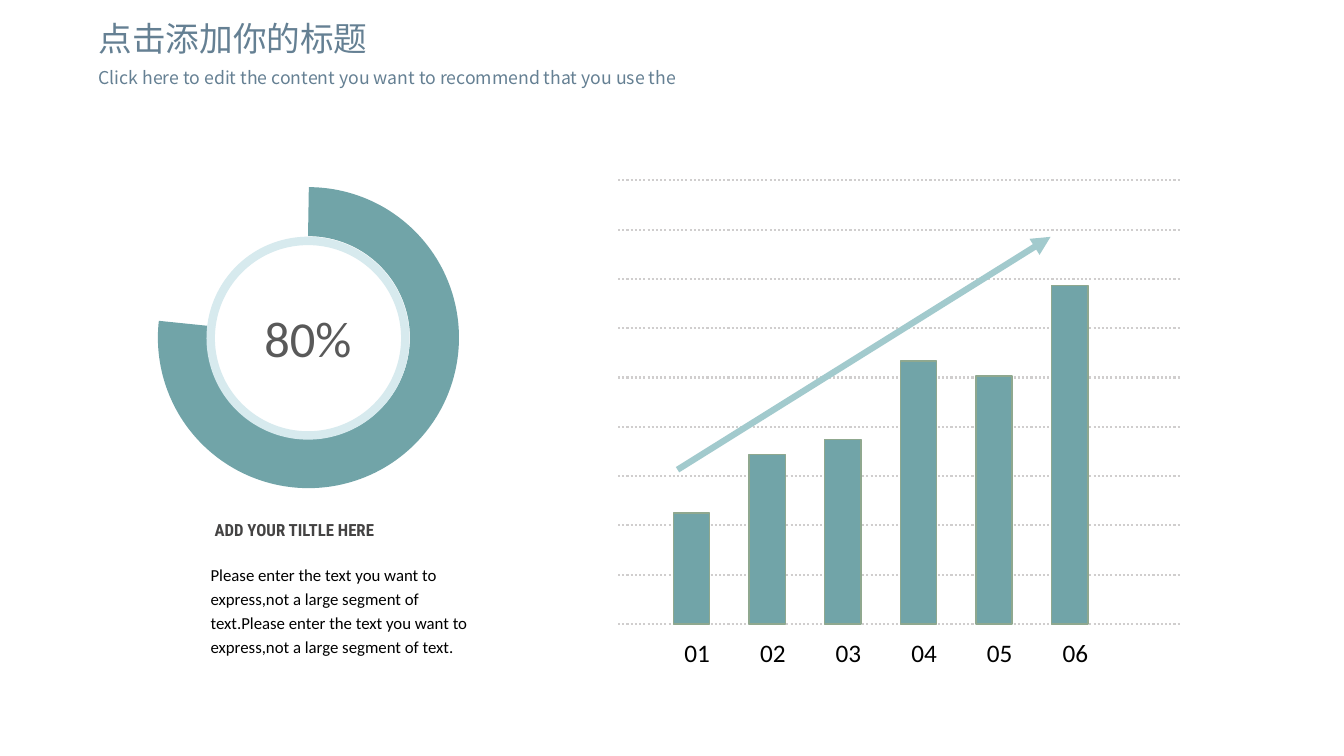
from lxml.etree import SubElement
from pptx import Presentation
from pptx.dml.color import RGBColor
from pptx.enum.dml import MSO_LINE
from pptx.enum.shapes import MSO_CONNECTOR, MSO_SHAPE
from pptx.enum.text import MSO_ANCHOR, PP_ALIGN
from pptx.oxml.ns import qn
from pptx.util import Inches, Pt

COLORS = {
    "slate": "658093", "teal": "71A4A8", "edge": "8FA88F", "ice": "D7EAEE",
    "aqua": "A2CACD", "grid": "D0CECE", "gray": "595959", "dark": "444343",
    "black": "000000",
}
CJK = "Noto Sans CJK JP"


class Board:
    def __init__(self, deck):
        self.slide = deck.slides.add_slide(deck.slide_layouts[6])
        self.shapes = self.slide.shapes

    def color(self, name):
        return RGBColor.from_string(COLORS[name])

    def line(self, start, end, color, width, dash=None, arrow=False):
        points = [Inches(v) for v in (*start, *end)]
        rule = self.shapes.add_connector(MSO_CONNECTOR.STRAIGHT, *points)
        rule.line.color.rgb = self.color(color)
        rule.line.width = Pt(width)
        if dash:
            rule.line.dash_style = dash
        if arrow:
            SubElement(rule.line._ln, qn("a:tailEnd"), type="triangle")
        SubElement(rule._element.spPr, qn("a:effectLst"))

    def shape(self, kind, box, edge, width, fill=None):
        item = self.shapes.add_shape(kind, *[Inches(v) for v in box])
        item.shadow.inherit = False
        if fill:
            item.fill.solid()
            item.fill.fore_color.rgb = self.color(fill)
        else:
            item.fill.background()
        item.line.color.rgb = self.color(edge)
        item.line.width = Pt(width)
        return item

    def text(self, box, words, size, color, font="Calibri", wrap=True,
             align=PP_ALIGN.LEFT, anchor=MSO_ANCHOR.TOP, space=None):
        item = self.shapes.add_textbox(*[Inches(v) for v in box])
        frame = item.text_frame
        frame.word_wrap = wrap
        frame.vertical_anchor = anchor
        para = frame.paragraphs[0]
        self.style(para, words, size, color, font, space)
        para.alignment = align
        return frame

    def style(self, para, words, size, color, font="Calibri", space=None):
        para.text = words
        para.line_spacing = space
        face = para.font
        face.size = Pt(size)
        face.name = font
        face.color.rgb = self.color(color)
        if font == CJK:
            for run in para.runs:
                SubElement(run._r.get_or_add_rPr(), qn("a:ea"), typeface=font)


def header(board):
    board.text((0.88, 0.17, 8.62, 0.47), "点击添加你的标题", 24, "slate", CJK,
               anchor=MSO_ANCHOR.MIDDLE, space=0.9)
    board.text((0.88, 0.62, 8.62, 0.33),
               "Click here to edit the content you want to recommend that you use the",
               12.6, "slate", CJK, anchor=MSO_ANCHOR.MIDDLE, space=0.9)


def bars(board):
    top, base, rows = 1.79, 6.19, 10
    step = (base - top) / (rows - 1)
    for row in range(rows):
        y = top + row * step
        board.line((6.13, y), (11.71, y), "grid", 1.5, MSO_LINE.ROUND_DOT)
    for i, tall in enumerate((1.1, 1.68, 1.83, 2.61, 2.46, 3.36)):
        x = 6.68 + 0.75 * i
        board.shape(MSO_SHAPE.RECTANGLE, (x, base - tall, 0.36, tall),
                    "edge", 1, "teal")
        board.text((x + 0.01, 6.27, 0.45, 0.4), f"{i + 1:02}", 18, "black",
                   wrap=False)
    board.line((6.72, 4.66), (10.42, 2.35), "aqua", 4.5, arrow=True)


def gauge(board):
    arc = board.shape(MSO_SHAPE.ARC, (1.81, 2.1, 2.5, 2.5), "teal", 35)
    arc.adjustments[0] = 162
    arc.adjustments[1] = 111.92
    board.shape(MSO_SHAPE.OVAL, (2.09, 2.39, 1.93, 1.93), "ice", 6)
    board.text((2.28, 3, 1.55, 0.71), "80%", 36, "gray",
               align=PP_ALIGN.CENTER)


def note(board):
    frame = board.text((1.99, 5.11, 2.91, 1.5), "ADD YOUR TILTLE HERE", 12,
                       "dark", "Roboto Condensed")
    head = frame.paragraphs[0]
    head.font.bold = True
    head._p.get_or_add_pPr().set("marL", str(Inches(0.04)))
    body = frame.add_paragraph()
    board.style(body, "Please enter the text you want to express,"
                "not a large segment of text."
                "Please enter the text you want to express,"
                "not a large segment of text.", 12, "black", space=1.2)
    body.space_before = Pt(14.5)


def main():
    deck = Presentation()
    deck.slide_width = Inches(13.33)
    deck.slide_height = Inches(7.5)
    board = Board(deck)
    bars(board)
    gauge(board)
    note(board)
    header(board)
    deck.save("out.pptx")


if __name__ == "__main__":
    main()
